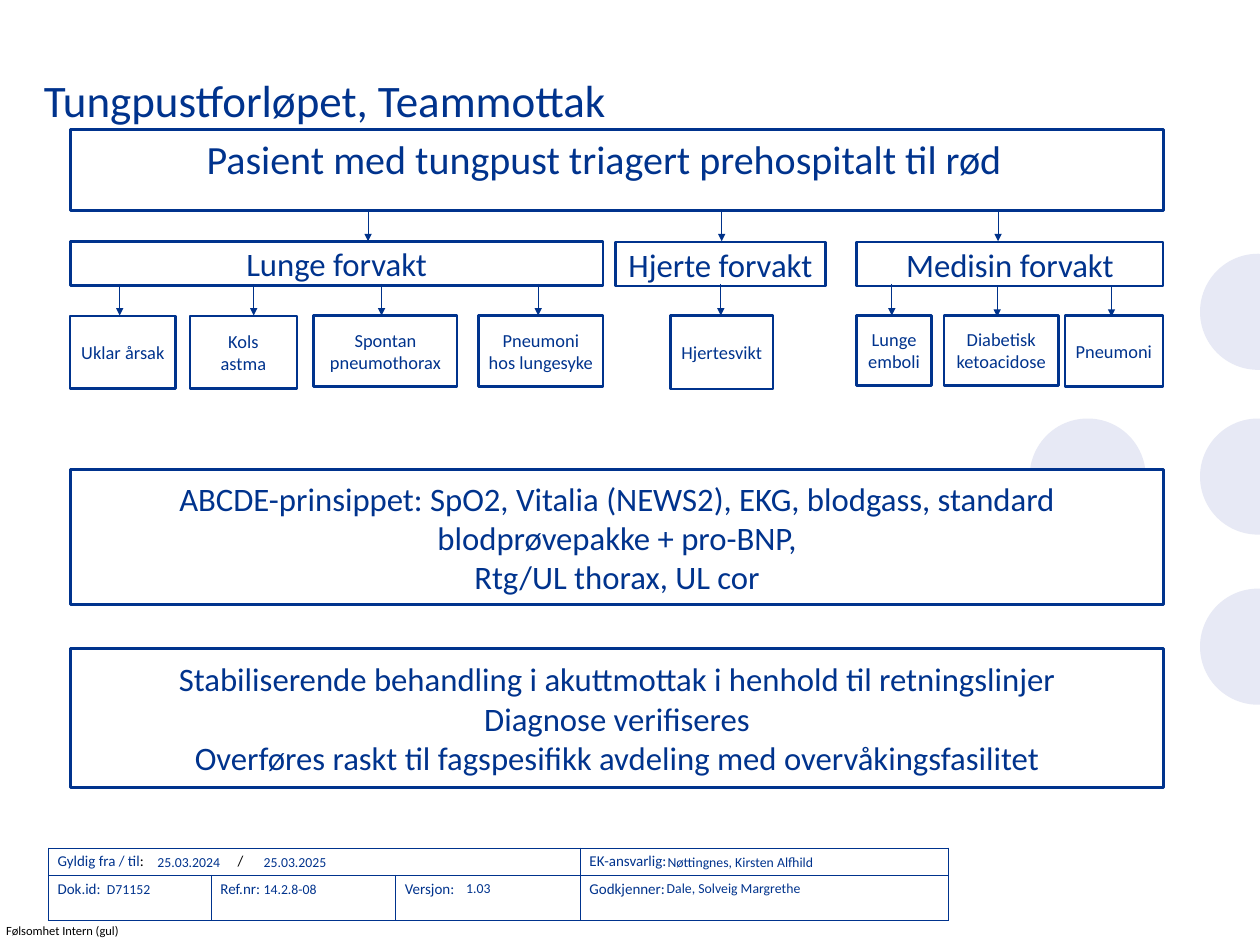
from dataclasses import dataclass
from lxml import etree
from pptx import Presentation
from pptx.dml.color import RGBColor
from pptx.enum import shapes, text
from pptx.oxml import ns
from pptx.util import Pt


@dataclass(frozen=True)
class Theme:
    font: str = "Calibri"
    navy: RGBColor = RGBColor.from_string("00338D")
    arrow: RGBColor = RGBColor.from_string("00328A")
    pale: RGBColor = RGBColor.from_string("E7E9F5")
    white: RGBColor = RGBColor.from_string("FFFFFF")
    black: RGBColor = RGBColor.from_string("000000")
    title: float = 36
    lead: float = 32
    body: float = 26.2
    leaf: float = 14.7
    table: float = 12
    field: float = 11
    footer: float = 10


t = Theme()


def write(tf, content, size, color=t.navy, align=text.PP_ALIGN.LEFT):
    tf.text = content
    for p in tf.paragraphs:
        p.alignment = align
        for r in p.runs:
            r.font.name = t.font
            r.font.size = Pt(size)
            r.font.color.rgb = color


def add_label(s, x, y, w, h, content, size, color=t.navy, wrap=True, inset=True):
    tf = s.shapes.add_textbox(Pt(x), Pt(y), Pt(w), Pt(h)).text_frame
    tf.word_wrap = wrap
    if not inset:
        tf.margin_left = tf.margin_right = tf.margin_top = tf.margin_bottom = 0
    write(tf, content, size, color)


prs = Presentation()
prs.slide_width, prs.slide_height = Pt(1008), Pt(756)
s = prs.slides.add_slide(prs.slide_layouts[6])

add_label(s, 5, 738.7, 93, 12.3, "Følsomhet Intern (gul)", t.footer, t.black, inset=False)

for x, y in [(960, 203), (960, 334.8), (823.7, 334.8), (960, 470.9)]:
    sp = s.shapes.add_shape(shapes.MSO_SHAPE.OVAL, Pt(x), Pt(y), Pt(92.9), Pt(92.9))
    sp.shadow.inherit = False
    sp.fill.solid()
    sp.fill.fore_color.rgb = t.pale
    sp.line.fill.background()

add_label(s, 28, 54.7, 873.4, 50.4, "Tungpustforløpet, Teammottak", t.title)

table_x, table_y = 38.9, 678.5
tbl = s.shapes.add_table(2, 4, Pt(table_x), Pt(table_y), Pt(720), Pt(57.6)).table
tbl.first_row = tbl.horz_banding = False
for col, w in zip(tbl.columns, [130.3, 147.6, 147.6, 294.5]):
    col.width = Pt(w)
for row, h in zip(tbl.rows, [21.8, 35.8]):
    row.height = Pt(h)
tbl.cell(0, 0).merge(tbl.cell(0, 2))
labels = [["Gyldig fra / til", "", "", "EK-ansvarlig:"],
          ["Dok.id:", "Ref.nr:", "Versjon:", "Godkjenner:"]]
for i, row in enumerate(labels):
    for j, label in enumerate(row):
        cell = tbl.cell(i, j)
        cell.fill.background()
        if label:
            write(cell.text_frame, label, t.table)
        tcPr = cell._tc.get_or_add_tcPr()
        for k, side in enumerate(["lnL", "lnR", "lnT", "lnB"]):
            ln = etree.Element(ns.qn("a:" + side), w=str(Pt(1)))
            fill = etree.SubElement(ln, ns.qn("a:solidFill"))
            etree.SubElement(fill, ns.qn("a:srgbClr"), val=str(t.navy))
            tcPr.insert(k, ln)

p = tbl.cell(0, 0).text_frame.paragraphs[0]
tabs = etree.SubElement(p._p.get_or_add_pPr(), ns.qn("a:tabLst"))
etree.SubElement(tabs, ns.qn("a:tab"), pos=str(Pt(144)), algn="l")
r = p.add_run()
r.text = ":\t/"
r.font.name, r.font.size = t.font, Pt(t.table)
r.font.color.rgb = t.black

fields = [
    (118.8, 679.7, 65.5, "25.03.2024"),
    (203.8, 679.7, 65.5, "25.03.2025"),
    (78.5, 701.3, 49.7, "D71152"),
    (526.3, 700, 122.4, "Dale, Solveig Margrethe"),
    (527, 679.7, 132.5, "Nøttingnes, Kirsten Alfhild"),
    (203.8, 701.3, 57.6, "14.2.8-08"),
    (365.8, 700.6, 34.6, "1.03"),
]
for x, y, w, value in fields:
    add_label(s, x, y, w, 20.9, value, t.field, wrap=False)

left, width = 56.2, 874.8
boxes = [
    (left, 103.7, width, 64.8, "Pasient med tungpust triagert prehospitalt til rød", t.lead),
    (left, 193.2, 426.2, 35.3, "Lunge forvakt", t.body),
    (492.5, 193.5, 167.8, 35.3, "Hjerte forvakt", t.body),
    (685.4, 193.5, 245, 35.3, "Medisin forvakt", t.body),
    (left, 252.7, 84.2, 58.3, "Uklar årsak", t.leaf),
    (151.9, 252.7, 85.7, 58.3, "Kols\nastma", t.leaf),
    (251, 252.2, 114.8, 56.9, "Spontan pneumothorax", t.leaf),
    (383, 252.2, 99.4, 56.9, "Pneumoni hos lungesyke", t.leaf),
    (536.4, 252.2, 82.1, 59, "Hjertesvikt", t.leaf),
    (685.4, 252.2, 59.8, 56.2, "Lunge emboli", t.leaf),
    (755.3, 252.2, 91.4, 56.2, "Diabetisk ketoacidose", t.leaf),
    (851.8, 252.2, 78.5, 56.9, "Pneumoni", t.leaf),
    (left, 375.8, width, 108,
     "ABCDE-prinsippet: SpO2, Vitalia (NEWS2), EKG, blodgass, standard "
     "blodprøvepakke + pro-BNP,\nRtg/UL thorax, UL cor", t.body),
    (left, 518.6, width, 111.6,
     "Stabiliserende behandling i akuttmottak i henhold til retningslinjer\n"
     "Diagnose verifiseres\n"
     "Overføres raskt til fagspesifikk avdeling med overvåkingsfasilitet", t.body),
]
for x, y, w, h, content, size in boxes:
    sp = s.shapes.add_shape(shapes.MSO_SHAPE.RECTANGLE, Pt(x), Pt(y), Pt(w), Pt(h))
    sp.shadow.inherit = False
    sp.fill.solid()
    sp.fill.fore_color.rgb = t.white
    sp.line.color.rgb = t.navy
    sp.line.width = Pt(2)
    tf = sp.text_frame
    tf.word_wrap = True
    tf.vertical_anchor = text.MSO_ANCHOR.MIDDLE
    if size == t.lead:
        tf.vertical_anchor = text.MSO_ANCHOR.TOP
        tf.margin_right = Pt(27)
    write(tf, content, size, align=text.PP_ALIGN.CENTER)

arrow_rows = [
    (167.8, [294.5, 577.4, 798.5]),
    (227.2, [95.8, 203, 305.3, 430.6, 576.7, 713.5]),
    (228.2, [797.8, 889.2]),
]
for y, xs in arrow_rows:
    for x in xs:
        c = s.shapes.add_connector(shapes.MSO_CONNECTOR.STRAIGHT, Pt(x), Pt(y), Pt(x), Pt(y + 25.2))
        c.line.color.rgb = t.arrow
        c.line.width = Pt(0.75)
        etree.SubElement(c.line._get_or_add_ln(), ns.qn("a:tailEnd"), type="triangle")
        etree.SubElement(c._element.spPr, ns.qn("a:effectLst"))

prs.save("out.pptx")
